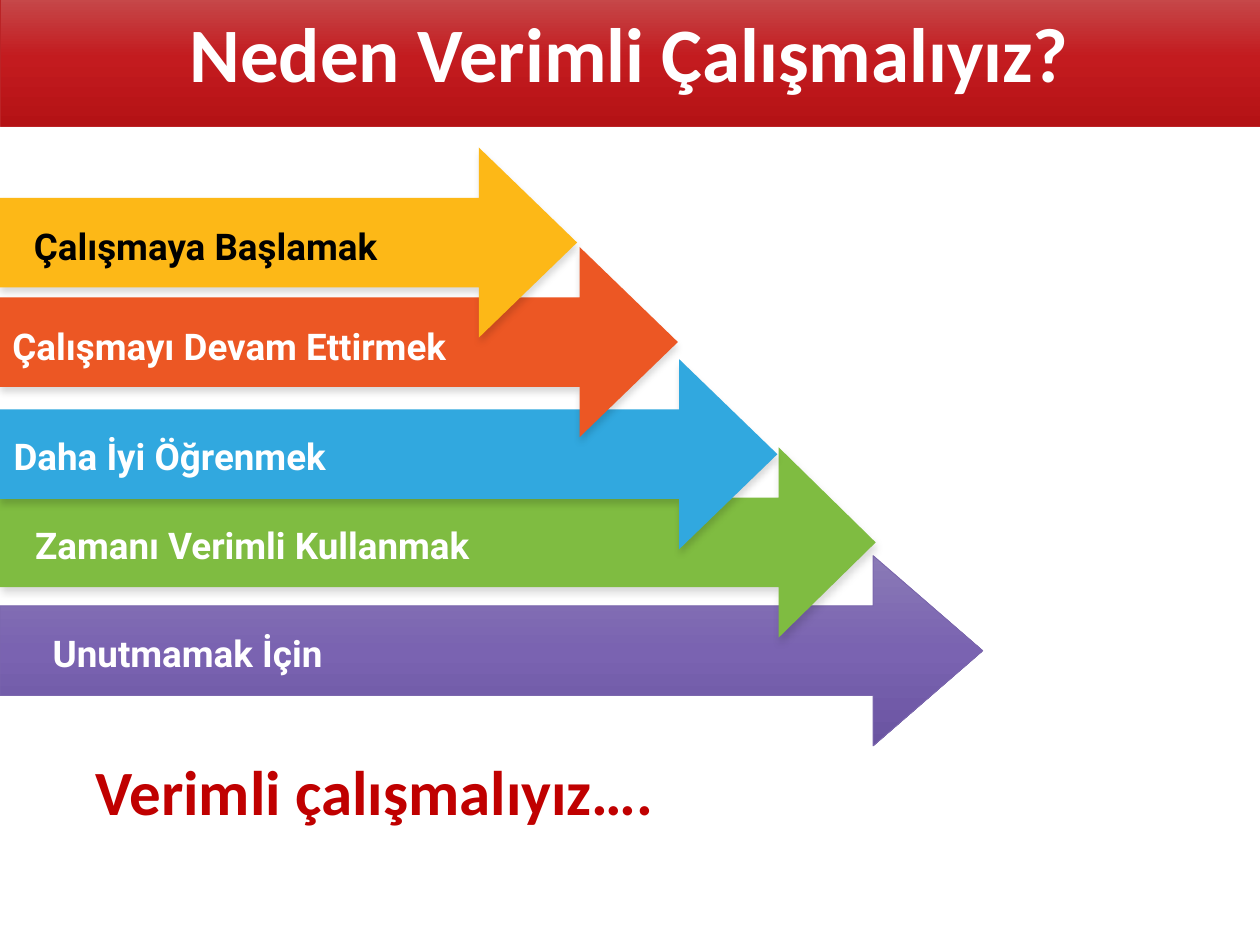
import pptx
import pptx.dml.color
import pptx.enum.text
import pptx.oxml
import pptx.oxml.ns
import pptx.util
from pptx.util import Inches

DRAWING_NS = pptx.oxml.ns.nsdecls("a")


def rgb(hex_color):
    return pptx.dml.color.RGBColor.from_string(hex_color)


def write(frame, text, size=21, font="Roboto", color="FFFFFF", align=None, spacing=None):
    paragraph = frame.paragraphs[0]
    paragraph.alignment = align
    paragraph.line_spacing = spacing
    run = paragraph.add_run()
    run.text = text
    run.font.size = pptx.util.Pt(size)
    run.font.name = font
    run.font.bold = True
    run.font.color.rgb = rgb(color)


deck = pptx.Presentation()
deck.slide_width, deck.slide_height = Inches(10), Inches(7.5)
slide = deck.slides.add_slide(deck.slide_layouts[5])

# Title banner
banner = slide.shapes.title
banner.left, banner.top = Inches(0), Inches(-0.09)
banner.width, banner.height = Inches(10), Inches(1.09)
banner.text_frame.auto_size = pptx.enum.text.MSO_AUTO_SIZE.NONE
banner.text_frame.vertical_anchor = pptx.enum.text.MSO_ANCHOR.MIDDLE
write(banner.text_frame, "Neden Verimli Çalışmalıyız?", size=44, font="Calibri",
      align=pptx.enum.text.PP_ALIGN.CENTER, spacing=0.9)

# Reason arrows, lowest first: top, neck, tip, colour
arrow_height, shoulder = 1.51, 0.4
reasons = [
    (4.41, 6.93, 7.8, "7A63B1"),
    (3.55, 6.18, 6.95, "7FBC41"),
    (2.85, 5.39, 6.17, "31A8DF"),
    (1.96, 4.6, 5.38, "EC5724"),
    (1.17, 3.8, 4.58, "FDB817"),
]
arrows = []
for top, neck, tip, color in reasons:
    bottom = top + arrow_height
    outline = [(neck, top), (neck, top + shoulder), (0, top + shoulder),
               (0, bottom - shoulder), (neck, bottom - shoulder), (neck, bottom)]
    builder = slide.shapes.build_freeform(Inches(tip), Inches(top + arrow_height / 2))
    builder.add_line_segments([(Inches(x), Inches(y)) for x, y in outline], close=True)
    arrow = builder.convert_to_shape()
    arrow.fill.solid()
    arrow.fill.fore_color.rgb = rgb(color)
    arrow.line.fill.background()
    arrow.shadow.inherit = False
    arrows.append(arrow)

# Soft shadow under the plain arrows
for arrow in arrows[1:]:
    effects = arrow._element.spPr.find(pptx.oxml.ns.qn("a:effectLst"))
    effects.append(pptx.oxml.parse_xml(
        f'<a:outerShdw {DRAWING_NS} blurRad="50800" dist="38100" dir="5400000" algn="t" '
        'rotWithShape="0"><a:srgbClr val="000000"><a:alpha val="15000"/></a:srgbClr></a:outerShdw>'))

# Vertical gradients on the banner and the lowest arrow
for shape, shades, edge in [
    (banner, ("C65051", "C31B1F", "B41215"), "BB2326"),
    (arrows[0], ("8A7AB6", "7A63B1", "6A54A1"), "7B67AD"),
]:
    shape.fill.gradient()
    shape.fill.gradient_angle = 270
    stops = shape._element.spPr.find(".//" + pptx.oxml.ns.qn("a:gsLst"))
    stops.clear()
    for index, shade in enumerate(shades):
        stops.append(pptx.oxml.parse_xml(
            f'<a:gs {DRAWING_NS} pos="{index * 50000}"><a:srgbClr val="{shade}"/></a:gs>'))
    shape.line.color.rgb = rgb(edge)
    shape.line.width = pptx.util.Pt(0.5)

# Reason labels and conclusion
conclusion_format = {"size": 36, "font": "Calibri", "color": "C00000"}
for left, top, width, height, text, text_format in [
    (0.17, 1.73, 4.01, 0.45, "Çalışmaya Başlamak", {"color": "000000"}),
    (0, 2.52, 4.97, 0.45, "Çalışmayı Devam Ettirmek", {}),
    (0.01, 3.39, 4.67, 0.45, "Daha İyi Öğrenmek", {}),
    (0.18, 4.1, 5.96, 0.45, "Zamanı Verimli Kullanmak", {}),
    (0.32, 4.96, 5.96, 0.45, "Unutmamak İçin", {}),
    (0.66, 5.92, 6.42, 0.71, "Verimli çalışmalıyız….", conclusion_format),
]:
    label = slide.shapes.add_textbox(Inches(left), Inches(top), Inches(width), Inches(height))
    label.text_frame.word_wrap = True
    label.text_frame.auto_size = pptx.enum.text.MSO_AUTO_SIZE.SHAPE_TO_FIT_TEXT
    write(label.text_frame, text, **text_format)

deck.save("out.pptx")
